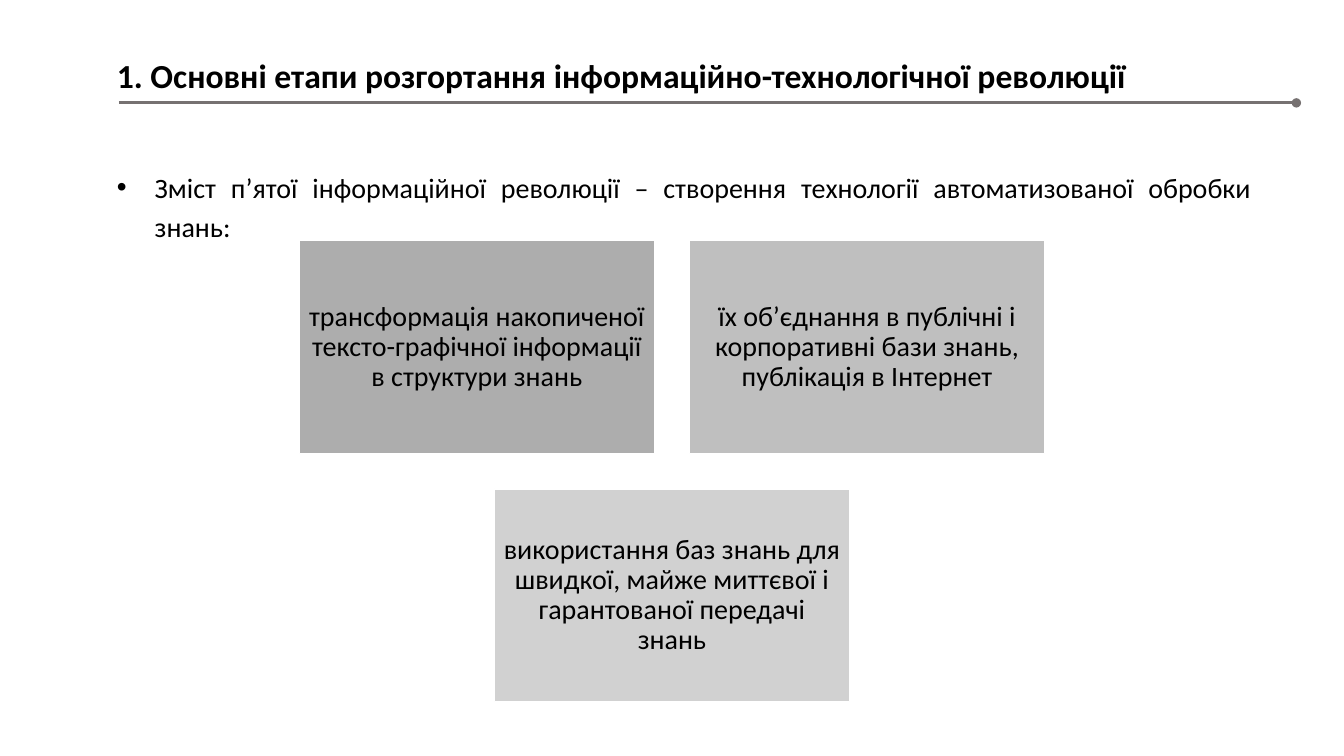
import pptx
import pptx.util
import pptx.dml.color
import pptx.enum.shapes
import pptx.enum.text
import pptx.oxml
import pptx.oxml.ns
import lxml.etree

Pt = pptx.util.Pt
Align = pptx.enum.text.PP_ALIGN
Anchor = pptx.enum.text.MSO_ANCHOR
COLORS = {"text": "000000", "rule": "767171", "box": "A5A5A5", "edge": "FFFFFF"}
WIDE, HIGH = 960, 540


def color(name):
    return pptx.dml.color.RGBColor.from_string(COLORS[name])


def add(parent, tag, **attrs):
    node = lxml.etree.SubElement(parent, pptx.oxml.ns.qn(tag))
    for key, val in attrs.items():
        node.set(key, str(val))
    return node


class Deck:
    face = "Calibri"

    def __init__(self):
        self.show = pptx.Presentation()
        self.show.slide_width, self.show.slide_height = Pt(WIDE), Pt(HIGH)
        self.slide = self.show.slides.add_slide(self.show.slide_layouts[1])

    def label(self, shape, text, size, para, frame, bold=False):
        body = shape.text_frame
        body.text = text
        frame = {"word_wrap": True, "auto_size": pptx.enum.text.MSO_AUTO_SIZE.NONE, **frame}
        for key, val in frame.items():
            setattr(body, key, val)
        line = body.paragraphs[0]
        for key, val in {"space_before": Pt(0), **para}.items():
            setattr(line, key, val)
        for key, val in {"name": self.face, "size": Pt(size), "bold": bold}.items():
            setattr(line.font, key, val)
        line.font.color.rgb = color("text")

    def place(self, shape, *spot):
        for key, val in zip(("left", "top", "width", "height"), spot):
            setattr(shape, key, Pt(val))

    def title(self, text, *spot):
        shape = self.slide.shapes.title
        self.place(shape, *spot)
        self.label(shape, text, 24, {"alignment": Align.LEFT},
                   {"vertical_anchor": Anchor.TOP}, bold=True)

    def lead(self, text, indent, *spot):
        shape = self.slide.placeholders[1]
        self.place(shape, *spot)
        # Plain paragraph with a first-line indent
        props = shape.text_frame.paragraphs[0]._p.get_or_add_pPr()
        props.set("marL", "0")
        props.set("indent", str(Pt(indent)))
        add(props, "a:buNone")
        self.label(shape, text, 20,
                   {"alignment": Align.JUSTIFY, "line_spacing": 1.15, "space_after": Pt(8)},
                   {"vertical_anchor": Anchor.TOP})

    def rule(self, left, right, top):
        line = self.slide.shapes.add_connector(
            pptx.enum.shapes.MSO_CONNECTOR.STRAIGHT, Pt(left), Pt(top), Pt(right), Pt(top))
        line.line.color.rgb = color("rule")
        line.line.width = Pt(2.25)
        props = line._element.spPr
        add(props.find(pptx.oxml.ns.qn("a:ln")), "a:tailEnd", type="oval")
        add(props, "a:effectLst")

    def box(self, text, alpha, *spot):
        shape = self.slide.shapes.add_shape(
            pptx.enum.shapes.MSO_SHAPE.RECTANGLE, *[Pt(val) for val in spot])
        shape.shadow.inherit = False
        shape.fill.solid()
        shape.fill.fore_color.rgb = color("box")
        tint = shape._element.spPr.find(".//" + pptx.oxml.ns.qn("a:srgbClr"))
        add(tint, "a:alpha", val=alpha * 1000)
        shape.line.color.rgb = color("edge")
        shape.line.width = Pt(1)
        sides = {"margin_" + side: Pt(6) for side in ("left", "top", "right", "bottom")}
        self.label(shape, text, 20, {"alignment": Align.CENTER, "line_spacing": 0.9},
                   {"vertical_anchor": Anchor.MIDDLE, **sides})


def main():
    deck = Deck()

    # Heading and rule
    deck.title("1. Основні етапи розгортання інформаційно-технологічної революції",
               76.3, 35.3, 836.6, 36)
    deck.rule(85, 926, 73.5)

    # Lead sentence
    deck.lead("Зміст п’ятої інформаційної революції – створення технології "
              "автоматизованої обробки знань:", 35.4, 76.3, 114.5, 825, 61)

    # Boxes in centred rows, each one paler than the last
    rows = [
        ["трансформація накопиченої тексто-графічної інформації в структури знань",
         "їх об’єднання в публічні і корпоративні бази знань, публікація в Інтернет"],
        ["використання баз знань для швидкої, майже миттєвої і гарантованої передачі знань"],
    ]
    width, height, gap, top = 253.4, 152, 25.3, 172
    alpha = 90
    for r, row in enumerate(rows):
        left = (WIDE - len(row) * width - (len(row) - 1) * gap) / 2
        for c, text in enumerate(row):
            deck.box(text, alpha, left + c * (width + gap), top + r * (height + gap),
                     width, height)
            alpha -= 20

    deck.show.save("out.pptx")


if __name__ == "__main__":
    main()
